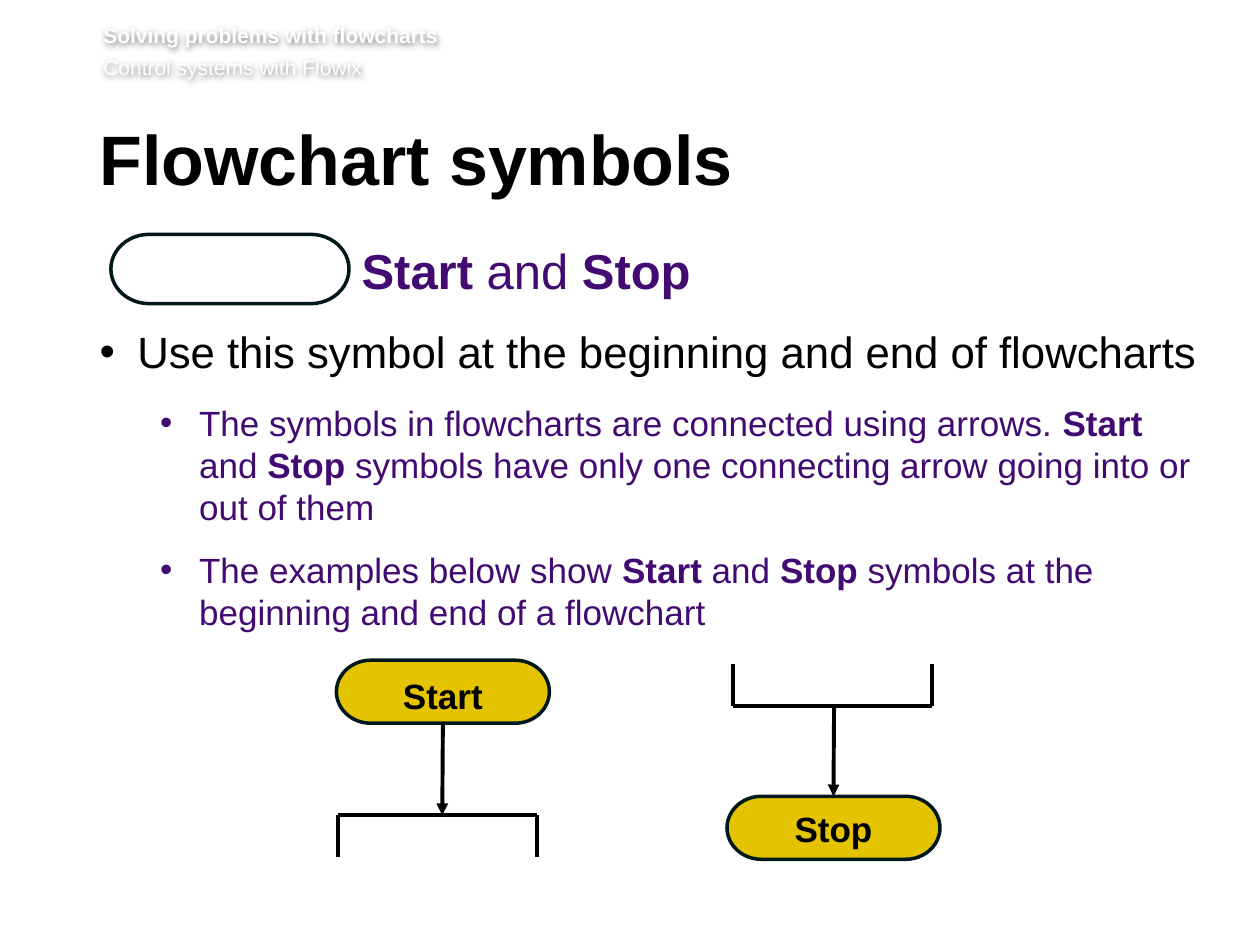
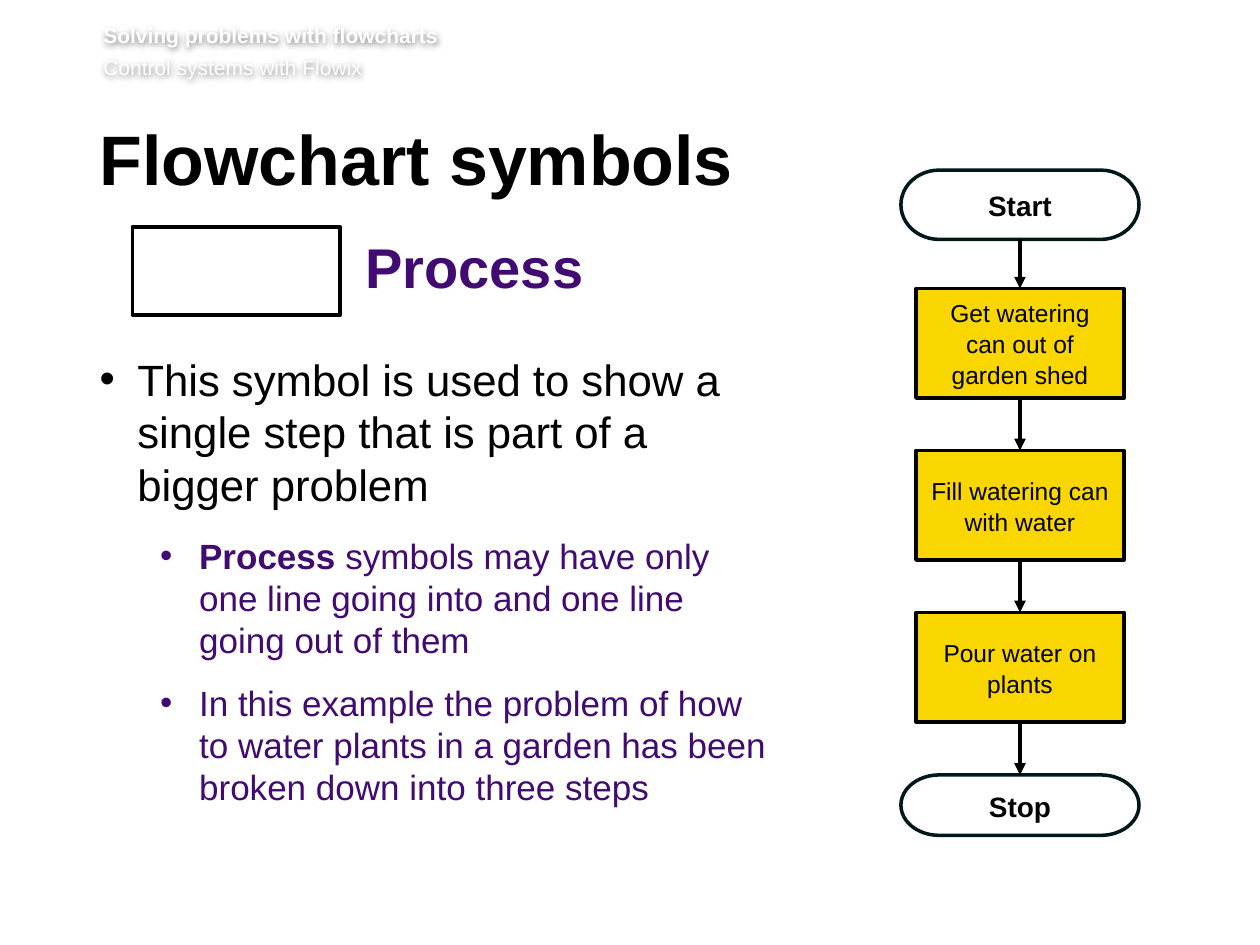
from lxml import etree
from pptx import Presentation
from pptx import util as u
from pptx.dml.color import RGBColor
from pptx.enum import shapes, text
from pptx.oxml import parse_xml
from pptx.oxml.ns import nsdecls, qn

HEX = {"ink": "000000", "edge": "00181A", "plum": "420B72", "gold": "E4C400",
       "sun": "FAD600", "white": "FFFFFF"}
FONT = "Arial"
PILL = shapes.MSO_SHAPE.FLOWCHART_TERMINATOR
BOX = shapes.MSO_SHAPE.RECTANGLE


def write(para, runs, size, color):
    """Add (words, bold) runs to a paragraph."""
    for words, bold in runs:
        run = para.add_run()
        run.text = words
        run.font.name, run.font.size, run.font.bold = FONT, u.Pt(size), bold
        run.font.color.rgb = RGBColor.from_string(HEX[color])


def symbol(slide, kind, place, edge, fill=None, label="", size=14, bold=False):
    """Draw one flowchart symbol with its label."""
    shape = slide.shapes.add_shape(kind, *[u.Inches(n) for n in place])
    shape.shadow.inherit = False
    shape.line.color.rgb = RGBColor.from_string(HEX[edge])
    shape.line.width = u.Pt(2)
    if fill:
        shape.fill.solid()
        shape.fill.fore_color.rgb = RGBColor.from_string(HEX[fill])
    else:
        shape.fill.background()
    if label:
        frame = shape.text_frame
        frame.word_wrap = True
        frame.vertical_anchor = text.MSO_ANCHOR.MIDDLE
        para = frame.paragraphs[0]
        para.alignment = text.PP_ALIGN.CENTER
        para.line_spacing = 1.05
        write(para, [(label, bold)], size, "ink")
    return shape


prs = Presentation()
prs.slide_width, prs.slide_height = u.Inches(10), u.Inches(7.5)
layout = prs.slide_layouts[1]

# Slide content: body place, heading and bullets
pages = [
    {"place": (0.79, 1.78, 8.85, 4.86), "indent": 2.08, "size": 28,
     "lead": 43, "after": 14.5,
     "head": [("Start", True), (" and ", False), ("Stop", True)],
     "main": "Use this symbol at the beginning and end of flowcharts",
     "subs": [[("The symbols in flowcharts are connected using arrows. ", False),
               ("Start ", True), ("and ", False), ("Stop", True),
               (" symbols have only one connecting arrow going into or out of them", False)],
              [("The examples below show ", False), ("Start", True), (" and ", False),
               ("Stop", True),
               (" symbols at the beginning and end of a flowchart", False)]]},
    {"place": (0.79, 1.84, 5.46, 4.68), "indent": 2.11, "size": 32,
     "lead": 39, "after": 30,
     "head": [("Process", True)],
     "main": "This symbol is used to show a single step that is part of a bigger problem",
     "subs": [[("Process", True),
               (" symbols may have only one line going into and one line going out of them", False)],
              [("In this example the problem of how to water plants in a garden "
                "has been broken down into three steps", False)]]},
]

# Titles and lists
slides = []
for page in pages:
    slide = prs.slides.add_slide(layout)
    slides.append(slide)
    title, body = slide.placeholders
    for holder, place, top in ((title, (0.79, 0.99, 8.55, 0.73), 0.05),
                               (body, page["place"], 0)):
        holder.left, holder.top, holder.width, holder.height = [u.Inches(n) for n in place]
        frame = holder.text_frame
        frame.word_wrap = True
        frame.auto_size = text.MSO_AUTO_SIZE.NONE
        frame.vertical_anchor = text.MSO_ANCHOR.TOP
        frame.margin_left, frame.margin_top = 0, u.Inches(top)
        frame.margin_right, frame.margin_bottom = u.Inches(0.1), u.Inches(0.05)
    para = title.text_frame.paragraphs[0]
    para.alignment = text.PP_ALIGN.LEFT
    para.line_spacing = u.Pt(39)
    write(para, [("Flowchart symbols", True)], 40, "ink")

    # Each row: runs, size, colour, level, indent, hang, line height, space after
    rows = [(page["head"], page["size"], "plum", 0, page["indent"], 0,
             page["lead"], page["after"]),
            ([(page["main"], False)], 25, "ink", 0, 0.3, 0.3, 30, 14)]
    rows += [(sub, 20, "plum", 1, 0.79, 0.31, 24, 12) for sub in page["subs"]]
    frame = body.text_frame
    for i, (runs, size, color, level, left, hang, lead, after) in enumerate(rows):
        para = frame.add_paragraph() if i else frame.paragraphs[0]
        para.level = level
        props = para._p.get_or_add_pPr()
        props.set("marL", str(u.Inches(left)))
        props.set("indent", str(-u.Inches(hang)))
        if hang:
            etree.SubElement(props, qn("a:buFont")).set("typeface", FONT)
            etree.SubElement(props, qn("a:buChar")).set("char", "•")
        else:
            etree.SubElement(props, qn("a:buNone"))
        para.space_before, para.space_after = u.Pt(0), u.Pt(after)
        para.line_spacing = u.Pt(lead)
        write(para, runs, size, color)

ends, steps = slides

# Running header, shared through the layout
header = ends.shapes.add_textbox(*[u.Inches(n) for n in (0.82, 0.17, 8.82, 0.49)])
frame = header.text_frame
frame.word_wrap = True
frame.margin_left = frame.margin_top = frame.margin_right = 0
for i, (words, bold) in enumerate([("Solving problems with flowcharts", True),
                                   ("Control systems with Flowix", False)]):
    para = frame.add_paragraph() if i else frame.paragraphs[0]
    para.space_before = u.Pt(2.9 * i)
    para.line_spacing = 1.05
    write(para, [(words, bold)], 12, "white")
header.element.spPr.append(parse_xml(
    f'<a:effectLst {nsdecls("a")}><a:outerShdw blurRad="50800" dist="12700" dir="5400000">'
    f'<a:srgbClr val="{HEX["ink"]}"><a:alpha val="50000"/></a:srgbClr>'
    '</a:outerShdw></a:effectLst>'))
layout.shapes.element.append(header.element)

# Start and Stop symbols
symbol(ends, PILL, (0.88, 1.86, 1.89, 0.55), "edge")
start = symbol(ends, PILL, (2.67, 5.24, 1.69, 0.5), "edge", "gold", "Start", 20, True)
start.text_frame.margin_top = u.Inches(0.1)
stop = symbol(ends, PILL, (5.77, 6.32, 1.69, 0.5), "edge", "gold", "Stop", 20, True)

# Lines: slide, from, to, joined start, joined end, arrowhead
lines = [(ends, (3.51, 5.74), (3.51, 6.47), start, None, True),
         (ends, (6.62, 5.6), (6.62, 6.32), None, stop, True)]
for left, bar, tip in ((2.68, 6.47, 6.8), (5.82, 5.6, 5.27)):
    right = left + 1.58
    lines.append((ends, (left, bar), (right, bar), None, None, False))
    lines += [(ends, (x, tip), (x, bar), None, None, False) for x in (left, right)]

# Process symbol and watering flowchart
symbol(steps, BOX, (1.05, 1.8, 1.65, 0.7), "ink")
chain = [symbol(steps, PILL, (7.15, 1.35, 1.89, 0.55), "edge", None, "Start", 16, True)]
for i, label in enumerate(["Get watering can out of garden shed",
                           "Fill watering can with water", "Pour water on plants"]):
    chain.append(symbol(steps, BOX, (7.27, 2.29 + 1.285 * i, 1.65, 0.87),
                        "ink", "sun", label))
chain.append(symbol(steps, PILL, (7.15, 6.15, 1.89, 0.48), "edge", None, "Stop", 16, True))
lines += [(steps, (0, 0), (0, 0), a, b, True) for a, b in zip(chain, chain[1:])]

# Connectors
for slide, head, tail, first, last, arrow in lines:
    link = slide.shapes.add_connector(shapes.MSO_CONNECTOR.STRAIGHT,
                                      *[u.Inches(n) for n in head + tail])
    if first:
        link.begin_connect(first, 2)
    if last:
        link.end_connect(last, 0)
    link.line.color.rgb = RGBColor.from_string(HEX["ink"])
    link.line.width = u.Pt(2.25)
    if arrow:
        etree.SubElement(link.line._get_or_add_ln(), qn("a:tailEnd")).set("type", "triangle")
    etree.SubElement(link.element.spPr, qn("a:effectLst"))

prs.save("out.pptx")
